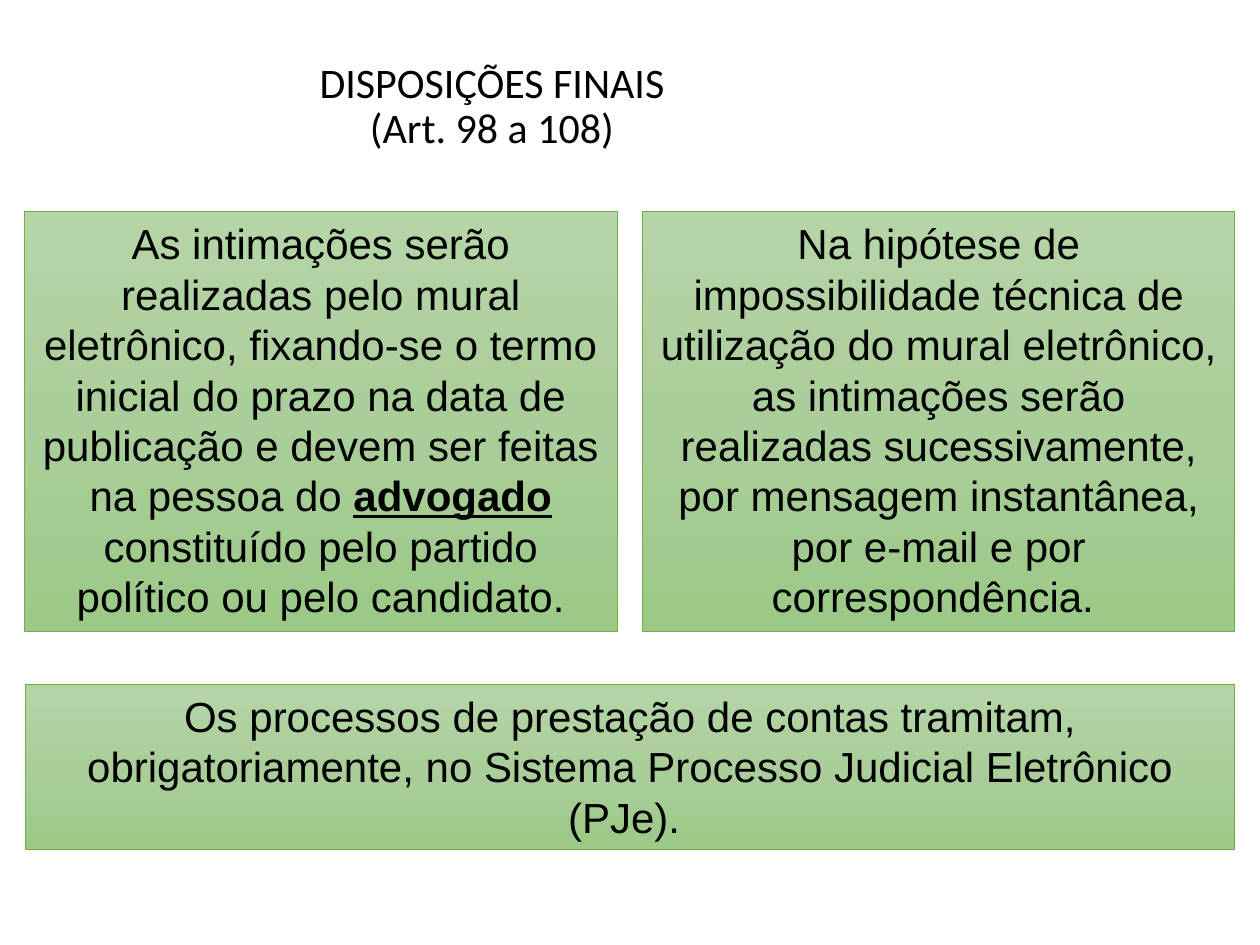
from copy import deepcopy

from pptx import Presentation
from pptx.dml.color import RGBColor
from pptx.enum.shapes import MSO_SHAPE
from pptx.enum.text import MSO_ANCHOR, MSO_AUTO_SIZE, PP_ALIGN
from pptx.oxml.ns import qn
from pptx.util import Inches, Pt

TITLE = ["DISPOSIÇÕES FINAIS", "(Art. 98 a 108)"]
TITLE_PLACE = (-0.22, 0.43, 8.25, 0.84)
PANELS = [
    ((0.19, 1.68, 4.71, 3.33), [
        ("As intimações serão realizadas pelo mural eletrônico, fixando-se o termo "
         "inicial do prazo na data de publicação e devem ser feitas na pessoa do ", False),
        ("advogado", True),
        (" constituído pelo partido político ou pelo candidato.", False),
    ]),
    ((5.1, 1.68, 4.7, 3.33), [
        ("Na hipótese de impossibilidade técnica de utilização do mural eletrônico, "
         "as intimações serão realizadas sucessivamente, por mensagem instantânea, "
         "por e-mail e por correspondência. ", False),
    ]),
    ((0.2, 5.43, 9.6, 1.31), [
        ("Os processos de prestação de contas tramitam, obrigatoriamente, no "
         "Sistema Processo Judicial Eletrônico (PJe). ", False),
    ]),
]
GRADIENT = [(0, "B5D5A7"), (0.5, "AACE9A"), (1, "9CC987")]
BORDER = "70AD47"
INK = "000000"


def color(value):
    return RGBColor.from_string(value)


def add_span(para, text, font_name, strong=False):
    span = para.add_run()
    span.text = text
    span.font.name = font_name
    span.font.size = Pt(24)
    span.font.color.rgb = color(INK)
    span.font.bold = span.font.underline = strong


def fill_gradient(shape):
    shape.fill.gradient()
    shape.fill.gradient_angle = 270
    stop_list = shape._element.spPr.find(qn("a:gradFill")).find(qn("a:gsLst"))
    stop_list.insert(1, deepcopy(stop_list[0]))
    for stop, (position, value) in zip(shape.fill.gradient_stops, GRADIENT):
        stop.position = position
        stop.color.rgb = color(value)


def add_title(page):
    box = page.shapes.add_textbox(*map(Inches, TITLE_PLACE))
    frame = box.text_frame
    frame.word_wrap = True
    frame.vertical_anchor = MSO_ANCHOR.MIDDLE
    para = frame.paragraphs[0]
    para.alignment = PP_ALIGN.CENTER
    para.line_spacing = 0.9
    for index, line in enumerate(TITLE):
        if index:
            para.add_line_break()
        add_span(para, line, "Calibri")


def add_panel(page, place, spans):
    panel = page.shapes.add_shape(MSO_SHAPE.RECTANGLE, *map(Inches, place))
    panel.shadow.inherit = False
    fill_gradient(panel)
    panel.line.color.rgb = color(BORDER)
    panel.line.width = Pt(0.5)
    frame = panel.text_frame
    frame.word_wrap = True
    frame.auto_size = MSO_AUTO_SIZE.SHAPE_TO_FIT_TEXT
    frame.vertical_anchor = MSO_ANCHOR.TOP
    para = frame.paragraphs[0]
    para.alignment = PP_ALIGN.CENTER
    for text, strong in spans:
        add_span(para, text, "Arial", strong)


def main():
    deck = Presentation()
    deck.slide_width, deck.slide_height = Inches(10), Inches(7.5)
    page = deck.slides.add_slide(deck.slide_layouts[6])
    add_title(page)
    for place, spans in PANELS:
        add_panel(page, place, spans)
    deck.save("out.pptx")


if __name__ == "__main__":
    main()
